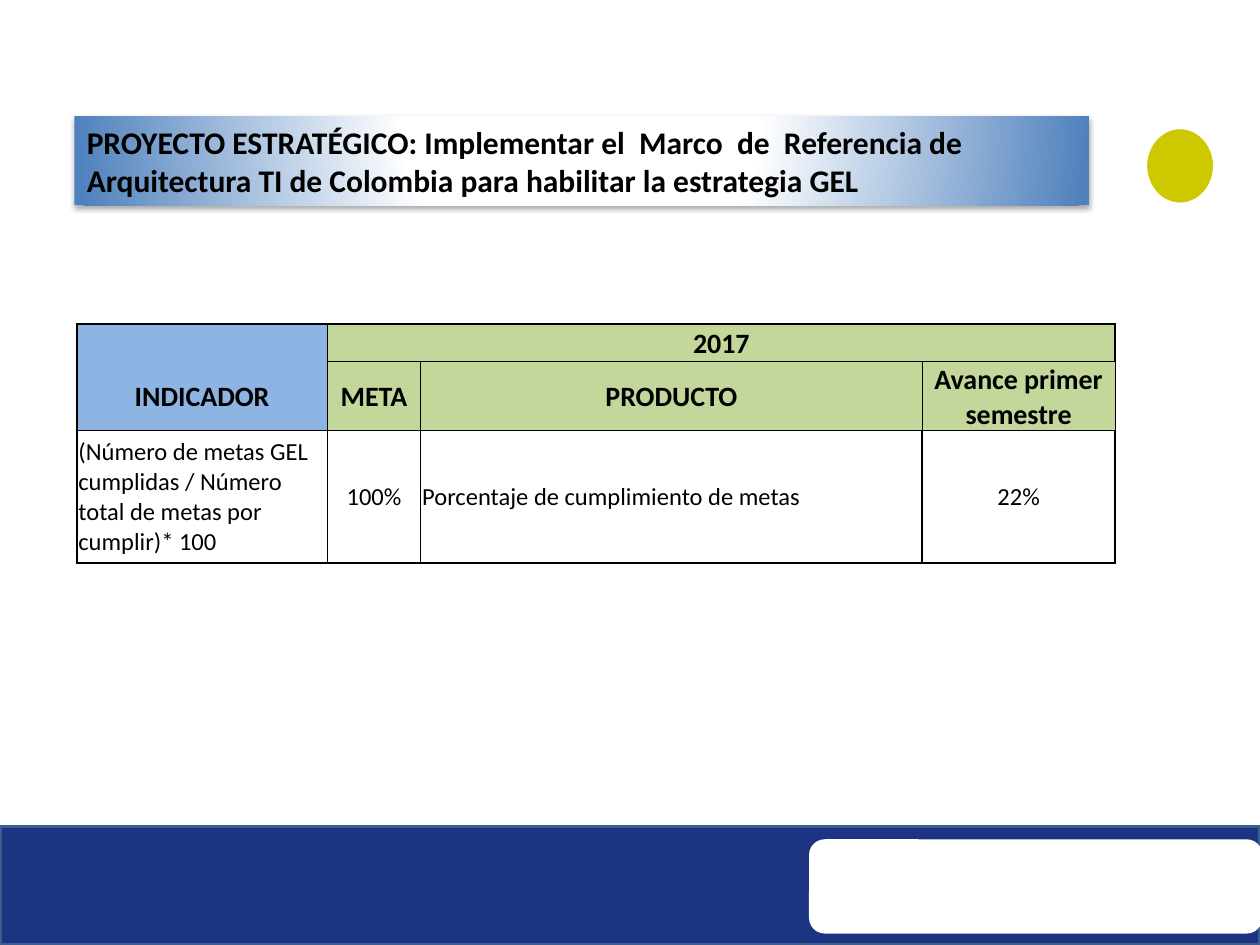
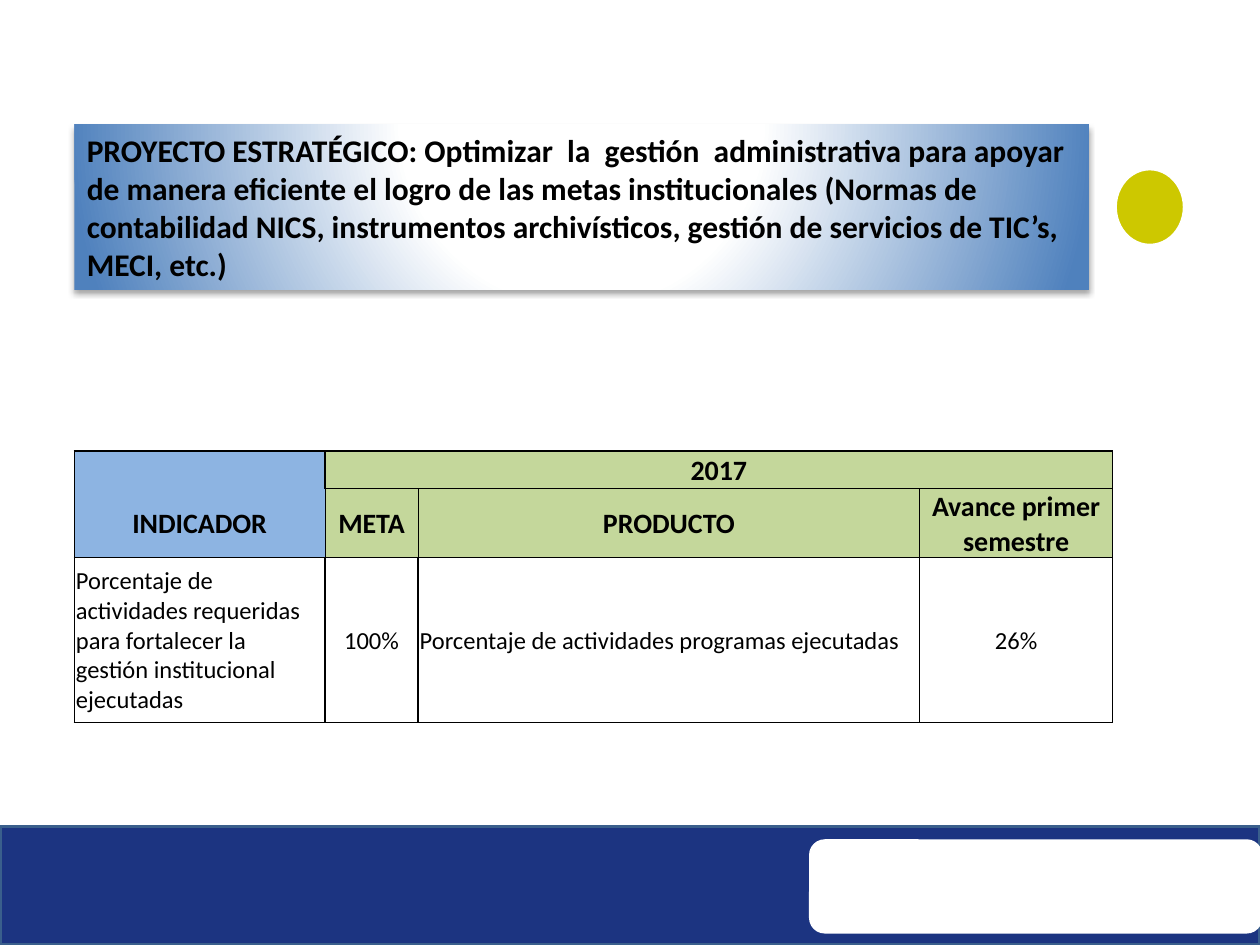
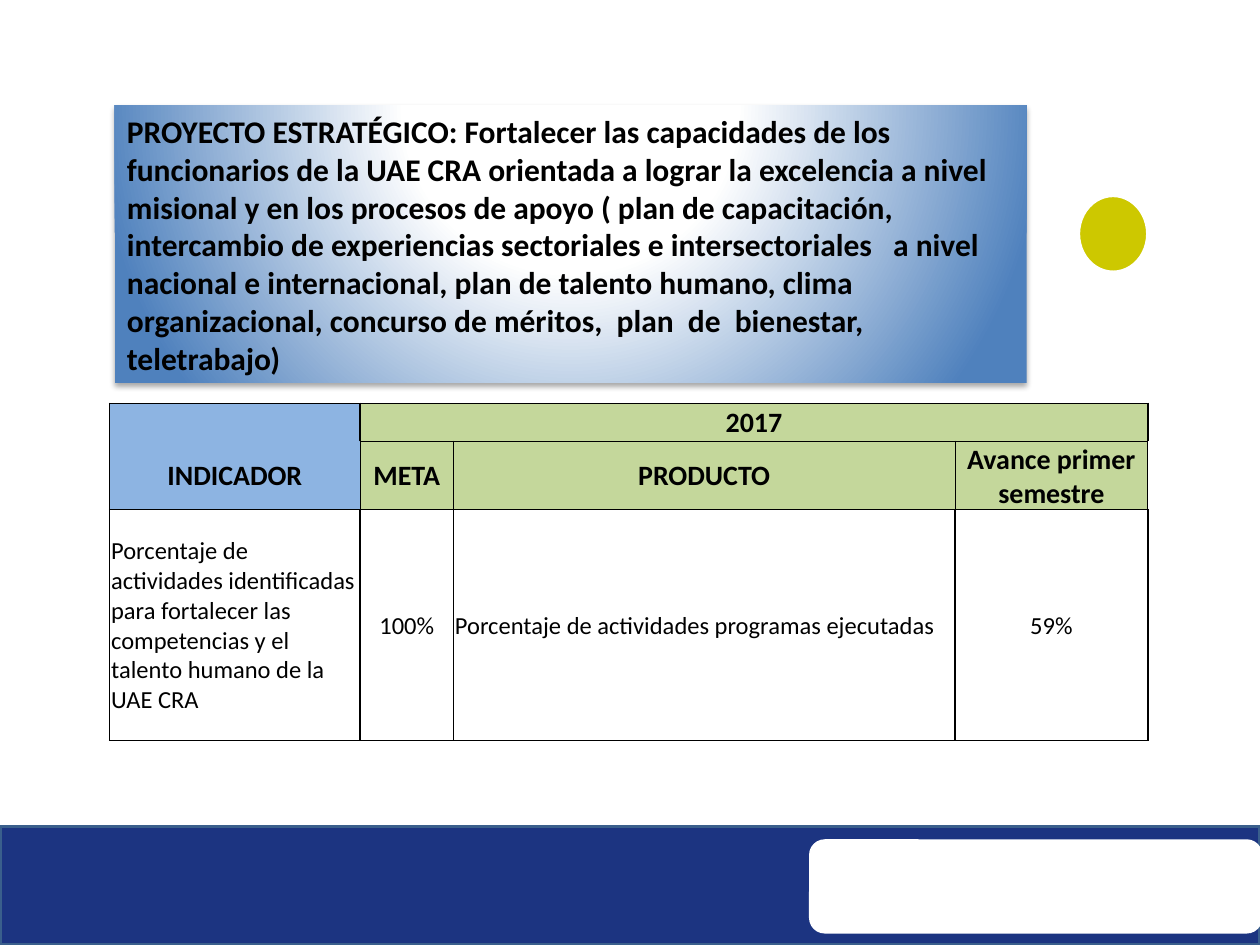
from dataclasses import dataclass

from lxml.etree import SubElement
from pptx import Presentation
from pptx.dml.color import RGBColor
from pptx.enum.shapes import MSO_SHAPE
from pptx.enum.text import MSO_ANCHOR, MSO_AUTO_SIZE, PP_ALIGN
from pptx.oxml import parse_xml
from pptx.oxml.ns import nsdecls, qn
from pptx.util import Cm, Pt


@dataclass(frozen=True)
class Theme:
    font: str = "Calibri"
    black: str = "000000"
    white: str = "FFFFFF"
    title_blue: str = "4F81BD"
    band: str = "1C3481"
    band_line: str = "3A5F8C"
    indicator: str = "8DB4E2"
    year: str = "C4D79B"
    status: str = "CDC800"
    title_size: int = 18
    head_size: int = 16
    body_size: int = 14


T = Theme()

# Table grid, in centimetres
COLS = (5.05, 1.88, 10.11, 3.89)
HEAD_ROWS = (0.76, 1.37)

# Border widths in points: left, right, top, bottom
CORNER = (1, 1, 1, 0)
YEAR = (1, 1, 1, 0.5)
INDICATOR = (1, 0.5, 0, 1)
SUBHEAD = (0.5, 0.5, 0.5, 1)
BODY = (1, 1, 1, 1)


@dataclass(frozen=True)
class Project:
    title: str
    title_box: tuple
    table_at: tuple
    body_height: float
    indicator: str
    product: str
    progress: str
    status_at: tuple


PROJECTS = (
    Project(
        "PROYECTO ESTRATÉGICO: Implementar el  Marco  de  Referencia de "
        "Arquitectura TI de Colombia para habilitar la estrategia GEL",
        (1.5, 2.34, 20.45, 1.8), (1.55, 6.53), 2.67,
        "(Número de metas GEL cumplidas / Número total de metas por cumplir)* 100",
        "Porcentaje de cumplimiento de metas", "22%", (23.09, 2.57)),
    Project(
        "PROYECTO ESTRATÉGICO: Optimizar  la  gestión  administrativa para "
        "apoyar de manera eficiente el logro de las metas institucionales "
        "(Normas de contabilidad NICS, instrumentos archivísticos, gestión de "
        "servicios de TIC’s, MECI, etc.)",
        (1.5, 2.51, 20.45, 3.33), (1.5, 9.09), 3.33,
        "Porcentaje de actividades requeridas para fortalecer la gestión "
        "institucional ejecutadas",
        "Porcentaje de actividades programas ejecutadas", "26%", (22.48, 3.4)),
    Project(
        "PROYECTO ESTRATÉGICO: Fortalecer las capacidades de los funcionarios "
        "de la UAE CRA orientada a lograr la excelencia a nivel misional y en "
        "los procesos de apoyo ( plan de capacitación, intercambio de "
        "experiencias sectoriales e intersectoriales   a nivel nacional e "
        "internacional, plan de talento humano, clima organizacional, concurso "
        "de méritos,  plan  de  bienestar, teletrabajo)",
        (2.31, 2.13, 18.39, 5.59), (2.21, 8.13), 4.65,
        "Porcentaje de actividades identificadas para fortalecer las "
        "competencias y el talento humano de la UAE CRA",
        "Porcentaje de actividades programas ejecutadas", "59%", (21.74, 3.94)),
)


def add_box(slide, kind, box, fill=None, line=None):
    sp = slide.shapes.add_shape(kind, *map(Cm, box))
    sp.shadow.inherit = False
    if fill:
        sp.fill.solid()
        sp.fill.fore_color.rgb = RGBColor.from_string(fill)
    else:
        sp.fill.background()
    if line:
        sp.line.color.rgb = RGBColor.from_string(line)
        sp.line.width = Pt(2)
    else:
        sp.line.fill.background()
    return sp


def write(tf, text, size, bold, align):
    tf.text = text
    p = tf.paragraphs[0]
    p.alignment = align
    for r in p.runs:
        r.font.name = T.font
        r.font.size = Pt(size)
        r.font.bold = bold
        r.font.color.rgb = RGBColor.from_string(T.black)


# Footer band with its white plate
def add_footer(slide, box):
    left, top, width, height = box
    add_box(slide, MSO_SHAPE.RECTANGLE, box, T.band, T.band_line)
    plate = (left + 16.31, top + 0.26, width - 16.26, height - 0.49)
    add_box(slide, MSO_SHAPE.ROUNDED_RECTANGLE, plate, T.white)


# Project title on a radial gradient with a soft shadow
def add_title(slide, text, box):
    sp = add_box(slide, MSO_SHAPE.RECTANGLE, box)
    spPr = sp._element.spPr
    stops = "".join(
        f'<a:gs pos="{pos}000"><a:srgbClr val="{color}"/></a:gs>'
        for pos, color in ((0, T.white), (35, T.white), (100, T.title_blue)))
    spPr.replace(spPr.find(qn("a:noFill")), parse_xml(
        f'<a:gradFill {nsdecls("a")} rotWithShape="1"><a:gsLst>{stops}</a:gsLst>'
        '<a:path path="circle"><a:fillToRect l="50000" t="-80000" r="50000" '
        'b="180000"/></a:path></a:gradFill>'))
    spPr.find(qn("a:effectLst")).append(parse_xml(
        f'<a:outerShdw {nsdecls("a")} blurRad="40000" dist="23000" dir="5400000" '
        f'rotWithShape="0"><a:srgbClr val="{T.black}"><a:alpha val="35000"/>'
        '</a:srgbClr></a:outerShdw>'))
    tf = sp.text_frame
    tf.word_wrap = True
    tf.auto_size = MSO_AUTO_SIZE.SHAPE_TO_FIT_TEXT
    tf.vertical_anchor = MSO_ANCHOR.MIDDLE
    write(tf, text, T.title_size, True, PP_ALIGN.LEFT)


def set_borders(cell, widths):
    tcPr = cell._tc.get_or_add_tcPr()
    for side, width in zip("LRTB", widths):
        ln = SubElement(tcPr, qn(f"a:ln{side}"), w=str(Pt(width)))
        if width:
            fill = SubElement(ln, qn("a:solidFill"))
            SubElement(fill, qn("a:srgbClr"), val=T.black)
        else:
            SubElement(ln, qn("a:noFill"))


def fill_cell(cell, text, borders, fill=None, align=PP_ALIGN.CENTER):
    set_borders(cell, borders)
    if fill:
        cell.fill.solid()
        cell.fill.fore_color.rgb = RGBColor.from_string(fill)
    else:
        cell.fill.background()
    cell.margin_left = cell.margin_right = cell.margin_top = Cm(0.03)
    cell.margin_bottom = 0
    cell.vertical_anchor = MSO_ANCHOR.MIDDLE
    size = T.head_size if fill else T.body_size
    write(cell.text_frame, text, size, bool(fill), align)
    if not text:
        p = cell.text_frame.paragraphs[0]
        SubElement(p._p, qn("a:endParaRPr"), sz=str(size * 100))


# Indicator table: two header rows and one result row
def add_indicator_table(slide, project):
    heights = (*HEAD_ROWS, project.body_height)
    box = (*project.table_at, sum(COLS), sum(heights))
    table = slide.shapes.add_table(3, len(COLS), *map(Cm, box)).table
    table.first_row = table.horz_banding = False
    for col, width in zip(table.columns, COLS):
        col.width = Cm(width)
    for row, height in zip(table.rows, heights):
        row.height = Cm(height)

    table.cell(0, 1).merge(table.cell(0, 3))
    fill_cell(table.cell(0, 0), "", CORNER, T.indicator)
    for c, text in enumerate(("2017", "", ""), 1):
        fill_cell(table.cell(0, c), text, YEAR, T.year)

    fill_cell(table.cell(1, 0), "INDICADOR", INDICATOR, T.indicator)
    for c, text in enumerate(("META", "PRODUCTO", "Avance primer semestre"), 1):
        fill_cell(table.cell(1, c), text, SUBHEAD, T.year)

    results = (project.indicator, "100%", project.product, project.progress)
    for c, text in enumerate(results):
        align = PP_ALIGN.CENTER if c % 2 else PP_ALIGN.LEFT
        fill_cell(table.cell(2, c), text, BODY, align=align)


# Status light beside the title
def add_status(slide, at):
    add_box(slide, MSO_SHAPE.OVAL, (*at, 1.4, 1.55), T.status, T.white)


def add_project_slide(prs, project):
    slide = prs.slides.add_slide(prs.slide_layouts[6])
    add_footer(slide, (0, 16.66, 25.4, 2.39))
    add_title(slide, project.title, project.title_box)
    add_indicator_table(slide, project)
    add_status(slide, project.status_at)


def main():
    prs = Presentation()
    prs.slide_width, prs.slide_height = Cm(25.4), Cm(19.05)
    for project in PROJECTS:
        add_project_slide(prs, project)
    prs.save("out.pptx")


if __name__ == "__main__":
    main()
